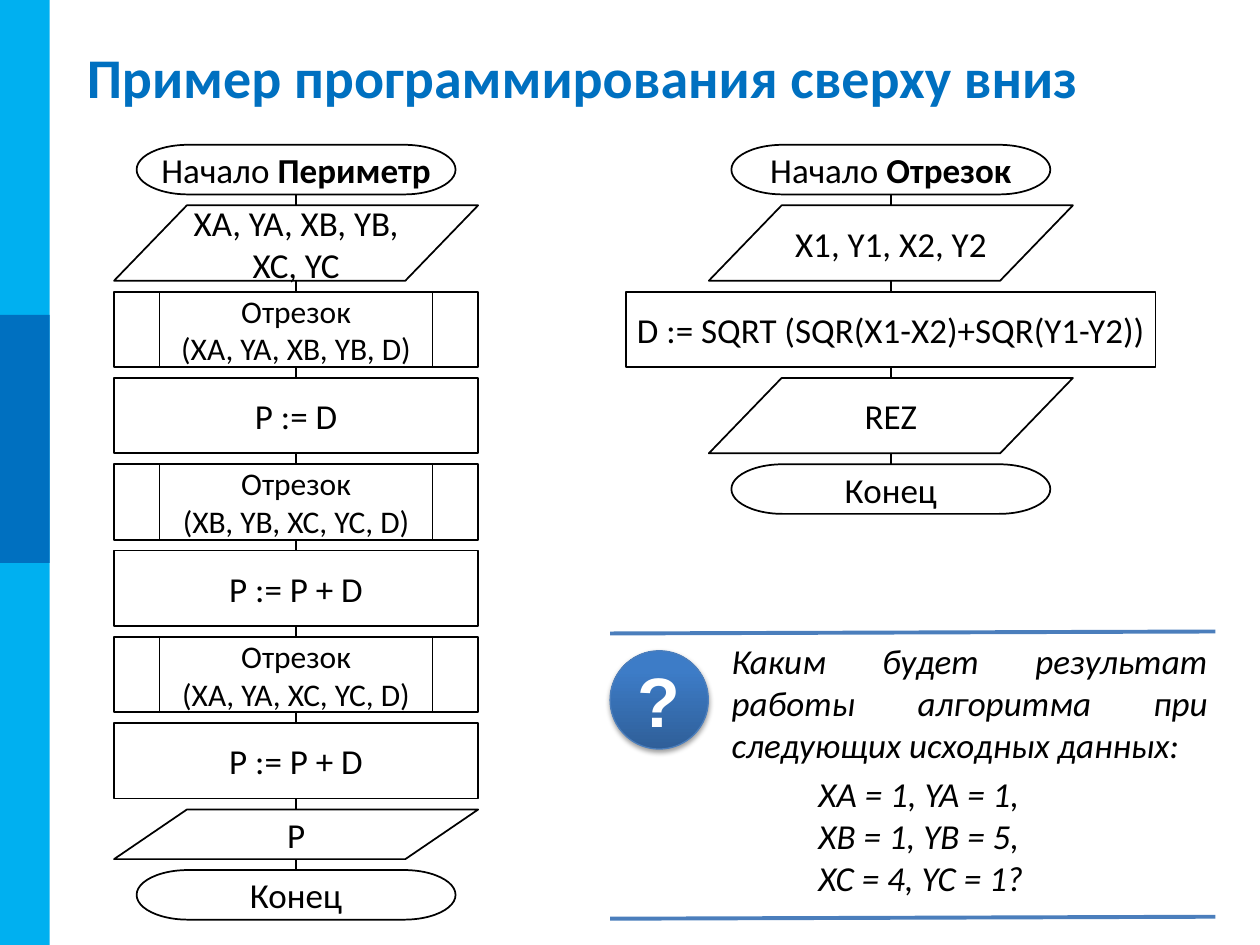
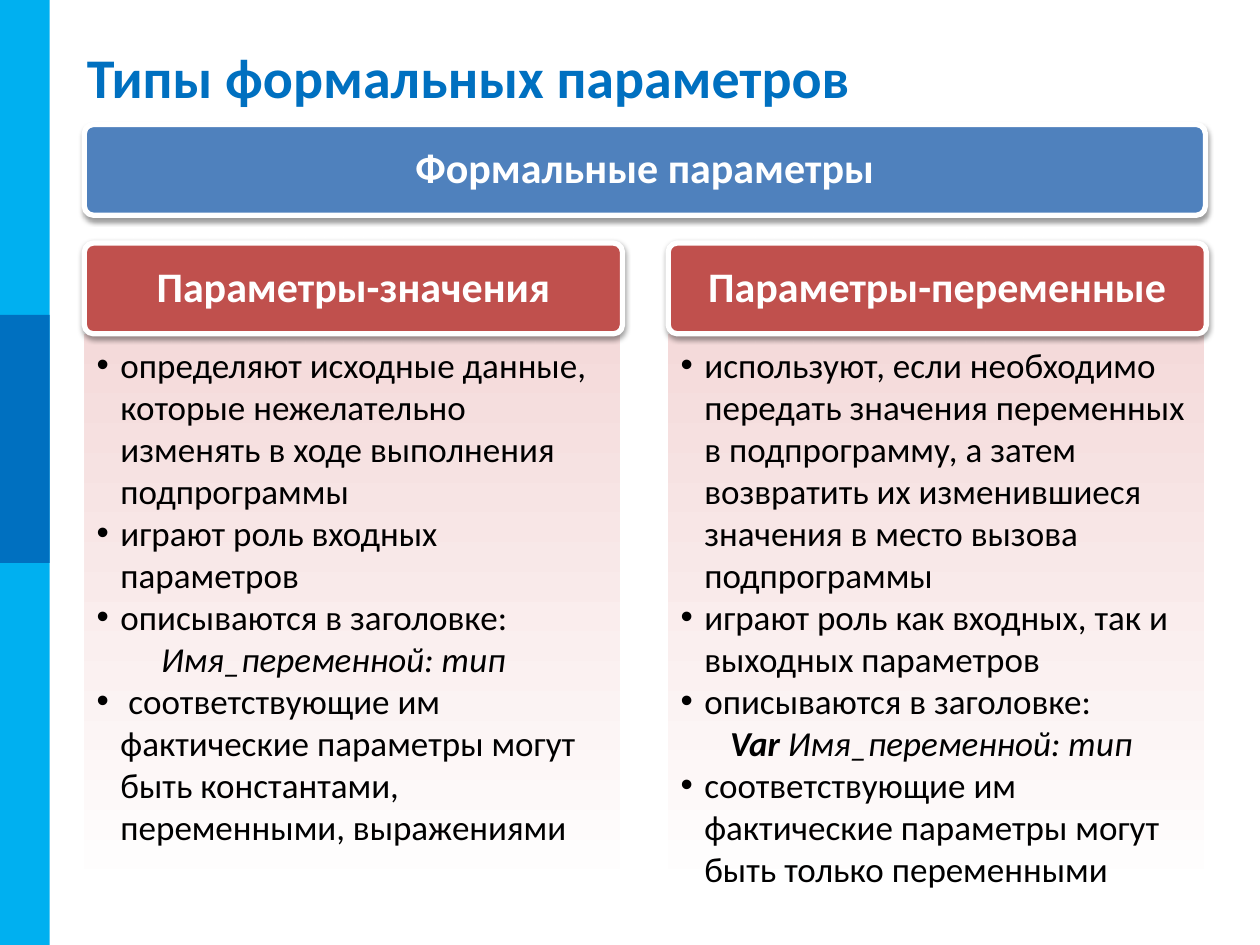
from lxml import etree
from pptx import Presentation
from pptx.dml.color import RGBColor
from pptx.enum.shapes import MSO_CONNECTOR, MSO_SHAPE
from pptx.enum.text import MSO_ANCHOR, PP_ALIGN
from pptx.oxml.ns import qn
from pptx.util import Cm, Pt

LINE = MSO_CONNECTOR.STRAIGHT
RECTANGLE = MSO_SHAPE.RECTANGLE
ROUNDED = MSO_SHAPE.ROUNDED_RECTANGLE
ELLIPSE = MSO_SHAPE.OVAL
TERMINATOR = MSO_SHAPE.FLOWCHART_TERMINATOR
DATA = MSO_SHAPE.FLOWCHART_DATA
PROCESS = MSO_SHAPE.FLOWCHART_PROCESS
CALL = MSO_SHAPE.FLOWCHART_PREDEFINED_PROCESS
TOP, MIDDLE = MSO_ANCHOR.TOP, MSO_ANCHOR.MIDDLE
LEFT, CENTER, JUSTIFY = PP_ALIGN.LEFT, PP_ALIGN.CENTER, PP_ALIGN.JUSTIFY

BLACK = RGBColor(0x00, 0x00, 0x00)
WHITE = RGBColor(0xFF, 0xFF, 0xFF)
SKY = RGBColor(0x00, 0xB0, 0xF0)
BLUE = RGBColor(0x00, 0x70, 0xC0)
STEEL = RGBColor(0x4F, 0x81, 0xBD)
RULE_BLUE = RGBColor(0x4B, 0x7E, 0xBC)
DEEP_BLUE = RGBColor(0x2F, 0x5F, 0x99)
BRIGHT_BLUE = RGBColor(0x3D, 0x7C, 0xC7)
RED = RGBColor(0xC0, 0x50, 0x4D)
PINK = RGBColor(0xF4, 0xDA, 0xDA)

BOLD, ITALIC = {"bold": True}, {"italic": True}
BODY = {"name": "Calibri", "size": Pt(20)}
SMALL = {**BODY, "size": Pt(18)}
TITLE = {**BODY, "size": Pt(32), **BOLD}
HEADER = {**BODY, "size": Pt(24), **BOLD}
MARK = {"name": "Arial", "size": Pt(40), **BOLD}

SLIDE_WIDTH, SLIDE_HEIGHT = 25.4, 19.05
FLOW_TOP, FLOW_GAP = 2.92, 0.22
TALL, SHORT = 1.52, 1.0
BLOCK_WIDTH, END_WIDTH, WIDE_BLOCK = 7.34, 6.43, 10.67
BULLET_INDENT = 0.48


def set_values(target, values):
    for name, value in values.items():
        setattr(target, name, value)


def set_frame(frame, anchor, side=0.25, top=0.13):
    set_values(frame, {
        "word_wrap": True, "vertical_anchor": anchor,
        "margin_left": Cm(side), "margin_right": Cm(side),
        "margin_top": Cm(top), "margin_bottom": Cm(0.13),
    })


def set_indent(paragraph, left, bullet=False):
    properties = paragraph._p.get_or_add_pPr()
    properties.set("marL", str(int(Cm(left))))
    properties.set("indent", str(-int(Cm(left)) if bullet else 0))
    if bullet:
        font = etree.SubElement(properties, qn("a:buFont"))
        font.set("typeface", "Arial")
        etree.SubElement(properties, qn("a:buChar")).set("char", "•")


def write(frame, texts, font, color=BLACK, **layout):
    paragraphs = []
    for number, runs in enumerate(texts):
        paragraph = frame.add_paragraph() if number else frame.paragraphs[0]
        set_values(paragraph, layout)
        if isinstance(runs, str):
            runs = [(runs, {})]
        for text, emphasis in runs:
            run = paragraph.add_run()
            run.text = text
            set_values(run.font, {**font, **emphasis})
            run.font.color.rgb = color
        paragraphs.append(paragraph)
    return paragraphs


def add_block(slide, kind, left, top, width, height, fill=WHITE, line=None, weight=1):
    shape = slide.shapes.add_shape(kind, Cm(left), Cm(top), Cm(width), Cm(height))
    shape.shadow.inherit = False
    if isinstance(fill, RGBColor):
        shape.fill.solid()
        shape.fill.fore_color.rgb = fill
    else:
        shape.fill.gradient()
        shape.fill.gradient_angle = 90
        for stop, (position, color) in zip(shape.fill.gradient_stops, fill):
            stop.position = position
            stop.color.rgb = color
    if line is None:
        shape.line.fill.background()
    else:
        shape.line.color.rgb = line
        shape.line.width = Pt(weight)
    return shape


def add_shadow(shape):
    effects = shape._element.spPr.find(qn("a:effectLst"))
    shadow = etree.SubElement(effects, qn("a:outerShdw"))
    settings = {"blurRad": int(Pt(3.1)), "dist": int(Pt(1.6)), "dir": 5400000, "rotWithShape": 0}
    for name, value in settings.items():
        shadow.set(name, str(value))
    color = etree.SubElement(shadow, qn("a:srgbClr"))
    color.set("val", str(BLACK))
    etree.SubElement(color, qn("a:alpha")).set("val", "38000")


def add_line(slide, start, end, color, weight):
    line = slide.shapes.add_connector(LINE, *(Cm(value) for value in start + end))
    line.line.color.rgb = color
    line.line.width = Pt(weight)
    etree.SubElement(line._element.spPr, qn("a:effectLst"))


def add_text(slide, left, top, width, height, anchor):
    box = slide.shapes.add_textbox(Cm(left), Cm(top), Cm(width), Cm(height))
    set_frame(box.text_frame, anchor)
    return box.text_frame


def add_slide(presentation, title):
    slide = presentation.slides.add_slide(presentation.slide_layouts[6])
    add_block(slide, RECTANGLE, 0, 0, 1, SLIDE_HEIGHT, SKY)
    add_block(slide, RECTANGLE, 0, 6.35, 1, 5, BLUE)
    write(add_text(slide, 1.5, 0.76, 23, 1.55, MIDDLE), [title], TITLE, BLUE)
    return slide


def add_flowchart(slide, center, steps):
    bottom = FLOW_TOP + sum(height + FLOW_GAP for _, _, height, _ in steps) - FLOW_GAP
    add_line(slide, (center, FLOW_TOP + SHORT), (center, bottom - SHORT), BLACK, 1)
    top = FLOW_TOP
    for kind, width, height, texts in steps:
        block = add_block(slide, kind, center - width / 2, top, width, height, line=BLACK)
        set_frame(block.text_frame, MIDDLE, side=0)
        write(block.text_frame, texts, SMALL if kind == CALL else BODY, alignment=CENTER)
        top += height + FLOW_GAP


def end_step(*runs):
    return TERMINATOR, END_WIDTH, SHORT, [list(runs)]


def start_step(name):
    return end_step(("Начало ", {}), (name, BOLD))


def step(kind, *texts, width=BLOCK_WIDTH, height=TALL):
    return kind, width, height, texts


def add_question(slide, left, top, right, bottom):
    for height in (top, bottom):
        add_line(slide, (left, height), (right, height - 0.04), RULE_BLUE, 2.25)
    circle = add_block(slide, ELLIPSE, left, top + 0.35, 1.98, 1.98,
                       [(0, DEEP_BLUE), (0.8, BRIGHT_BLUE)], RULE_BLUE, 0.75)
    add_shadow(circle)
    set_frame(circle.text_frame, MIDDLE)
    write(circle.text_frame, ["?"], MARK, WHITE, alignment=CENTER)
    frame = add_text(slide, 14.5, top, 10.1, bottom - top, TOP)
    question, *values = write(frame, [
        "Каким будет результат работы алгоритма при следующих исходных данных:",
        "XA = 1, YA = 1,",
        "XB = 1, YB = 5,",
        "XC = 4, YC = 1?",
    ], {**BODY, **ITALIC}, alignment=LEFT)
    question.alignment = JUSTIFY
    question.space_before = values[0].space_before = Pt(4)
    for value in values:
        set_indent(value, 1.75)


def add_header(slide, left, top, width, text, color):
    header = add_block(slide, ROUNDED, left, top, width, 1.83, color, WHITE, 3)
    header.adjustments[0] = 0.1
    add_shadow(header)
    set_frame(header.text_frame, MIDDLE)
    write(header.text_frame, [text], HEADER, WHITE, alignment=CENTER, line_spacing=0.9)


def add_parameter_panel(slide, left, heading, items, declaration_indent):
    panel = add_block(slide, RECTANGLE, left, 6.73, 10.8, 11.4, [(0, WHITE), (1, PINK)])
    set_frame(panel.text_frame, TOP, top=0.2)
    for paragraph, item in zip(write(panel.text_frame, items, BODY, alignment=LEFT), items):
        if isinstance(item, str):
            set_indent(paragraph, BULLET_INDENT, bullet=True)
        else:
            set_indent(paragraph, declaration_indent)
    add_header(slide, left, 4.9, 10.85, heading, RED)


def build_top_down_slide(presentation):
    slide = add_slide(presentation, "Пример программирования сверху вниз")
    finish = end_step(("Конец", {}))
    add_flowchart(slide, 5.97, [
        start_step("Периметр"),
        step(DATA, "XА, YA, XB, YB, XC, YC"),
        step(CALL, "Отрезок", "(XА, YA, XB, YB, D)"),
        step(PROCESS, "P := D"),
        step(CALL, "Отрезок", "(XB, YB, XC, YC, D)"),
        step(PROCESS, "P := P + D"),
        step(CALL, "Отрезок", "(XА, YA, XC, YC, D)"),
        step(PROCESS, "P := P + D"),
        step(DATA, "P", height=SHORT),
        finish,
    ])
    add_flowchart(slide, 17.96, [
        start_step("Отрезок"),
        step(DATA, "X1, Y1, X2, Y2"),
        step(PROCESS, "D := SQRT (SQR(X1-X2)+SQR(Y1-Y2))", width=WIDE_BLOCK),
        step(DATA, "REZ"),
        finish,
    ])
    add_question(slide, 12.3, 12.77, 24.5, 18.52)


def build_parameters_slide(presentation):
    slide = add_slide(presentation, "Типы формальных параметров")
    add_header(slide, 1.7, 2.51, 22.6, "Формальные параметры", STEEL)
    declaration = ("Имя_переменной: тип", ITALIC)
    add_parameter_panel(slide, 1.7, "Параметры-значения", [
        "определяют исходные данные, которые нежелательно изменять в ходе выполнения подпрограммы",
        "играют роль входных параметров",
        "описываются в заголовке:",
        [declaration],
        " соответствующие им фактические параметры могут быть константами, переменными, выражениями",
    ], 1.3)
    add_parameter_panel(slide, 13.47, "Параметры-переменные", [
        "используют, если необходимо передать значения переменных в подпрограмму, "
        "а затем возвратить их изменившиеся значения в место вызова подпрограммы",
        "играют роль как входных, так и выходных параметров",
        "описываются в заголовке:",
        [("Var ", {**BOLD, **ITALIC}), declaration],
        "соответствующие им фактические параметры могут быть только переменными",
    ], 1)


def main():
    presentation = Presentation()
    presentation.slide_width = Cm(SLIDE_WIDTH)
    presentation.slide_height = Cm(SLIDE_HEIGHT)
    build_top_down_slide(presentation)
    build_parameters_slide(presentation)
    presentation.save("out.pptx")


if __name__ == "__main__":
    main()
